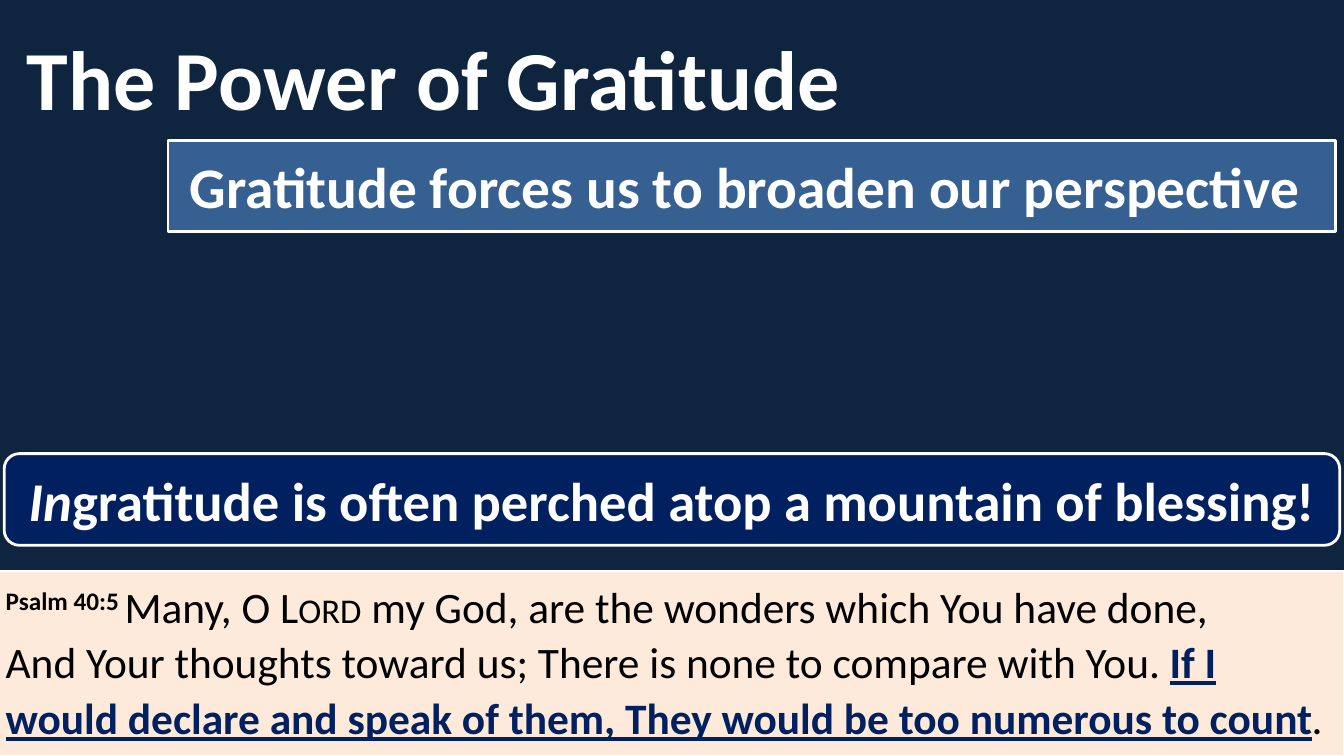
from pptx import Presentation
from pptx import util as u
from pptx.dml.color import RGBColor
from pptx.enum import shapes, text

COLORS = {
    "night": "0F243E",
    "white": "FFFFFF",
    "black": "000000",
    "steel": "376092",
    "navy": "002060",
    "peach": "FDEADA",
}
COLUMNS, ROWS = 80, 45
WIDTH, HEIGHT = u.Inches(13.333), u.Inches(7.5)


def rgb(name):
    return RGBColor.from_string(COLORS[name])


def grid(left, top, columns, rows):
    cell_w, cell_h = WIDTH / COLUMNS, HEIGHT / ROWS
    return (round(left * cell_w), round(top * cell_h),
            round(columns * cell_w), round(rows * cell_h))


def add_span(para, words, size, color="white", bold=True, italic=False,
             underline=False, **marks):
    span = para.add_run()
    span.text = words
    font = span.font
    font.name, font.size = "Calibri", u.Pt(size)
    font.bold, font.italic, font.underline = bold, italic, underline
    font.color.rgb = rgb(color)
    for mark, value in marks.items():
        span._r.get_or_add_rPr().set(mark, value)


def add_panel(page, box, kind, fill, line_width):
    panel = page.shapes.add_shape(kind, *box)
    panel.shadow.inherit = False
    panel.fill.solid()
    panel.fill.fore_color.rgb = rgb(fill)
    panel.line.color.rgb = rgb("white")
    panel.line.width = u.Pt(line_width)
    panel.text_frame.word_wrap = True
    return panel.text_frame


def place_title(page, box):
    title = page.shapes.title
    title.left, title.top, title.width, title.height = box
    frame = title.text_frame
    frame.auto_size = text.MSO_AUTO_SIZE.NONE
    frame.vertical_anchor = text.MSO_ANCHOR.MIDDLE
    para = frame.paragraphs[0]
    para.alignment = text.PP_ALIGN.LEFT
    add_span(para, "The Power of Gratitude", 60)


def add_banner(page, box, kind, fill):
    frame = add_panel(page, box, kind, fill, 2)
    frame.vertical_anchor = text.MSO_ANCHOR.MIDDLE
    para = frame.paragraphs[0]
    para.alignment = text.PP_ALIGN.CENTER
    return para


def add_verse(page, box):
    frame = add_panel(page, box, shapes.MSO_SHAPE.RECTANGLE, "peach", 1.5)
    frame.vertical_anchor = text.MSO_ANCHOR.TOP
    para = frame.paragraphs[0]
    para.alignment = text.PP_ALIGN.LEFT
    para.line_spacing = 1.07
    size = 31
    add_span(para, "Psalm 40:5 ", size, "black", baseline="30000")
    add_span(para, "Many, O ", size, "black", bold=False)
    add_span(para, "Lord", size, "black", bold=False, cap="small")
    add_span(para, " my God, are the wonders which You have done,", size,
             "black", bold=False)
    para.add_line_break()
    add_span(para, "And Your thoughts toward us; There is none to compare with You. ",
             size, "black", bold=False)
    add_span(para, "If I would declare and speak of them, "
             "They would be too numerous to count", size, "navy", underline=True)
    add_span(para, ".", size, "black", bold=False)


def build_gratitude_slide(deck):
    page = deck.slides.add_slide(deck.slide_layouts[5])
    page.background.fill.solid()
    page.background.fill.fore_color.rgb = rgb("night")
    place_title(page, grid(1, 0.84, 55, 7.5))
    add_verse(page, grid(-0.25, 34, 80.25, 11))
    perspective = add_banner(page, grid(10, 8.34, 69.5, 5.46),
                             shapes.MSO_SHAPE.RECTANGLE, "steel")
    add_span(perspective, "Gratitude forces us to broaden our perspective ", 41)
    warning = add_banner(page, grid(0.25, 27, 79.5, 5.46),
                         shapes.MSO_SHAPE.ROUNDED_RECTANGLE, "navy")
    add_span(warning, "In", 39, italic=True)
    add_span(warning, "gratitude is often perched atop a mountain of blessing!", 39)


def main():
    deck = Presentation()
    deck.slide_width, deck.slide_height = WIDTH, HEIGHT
    build_gratitude_slide(deck)
    deck.save("out.pptx")


if __name__ == "__main__":
    main()
